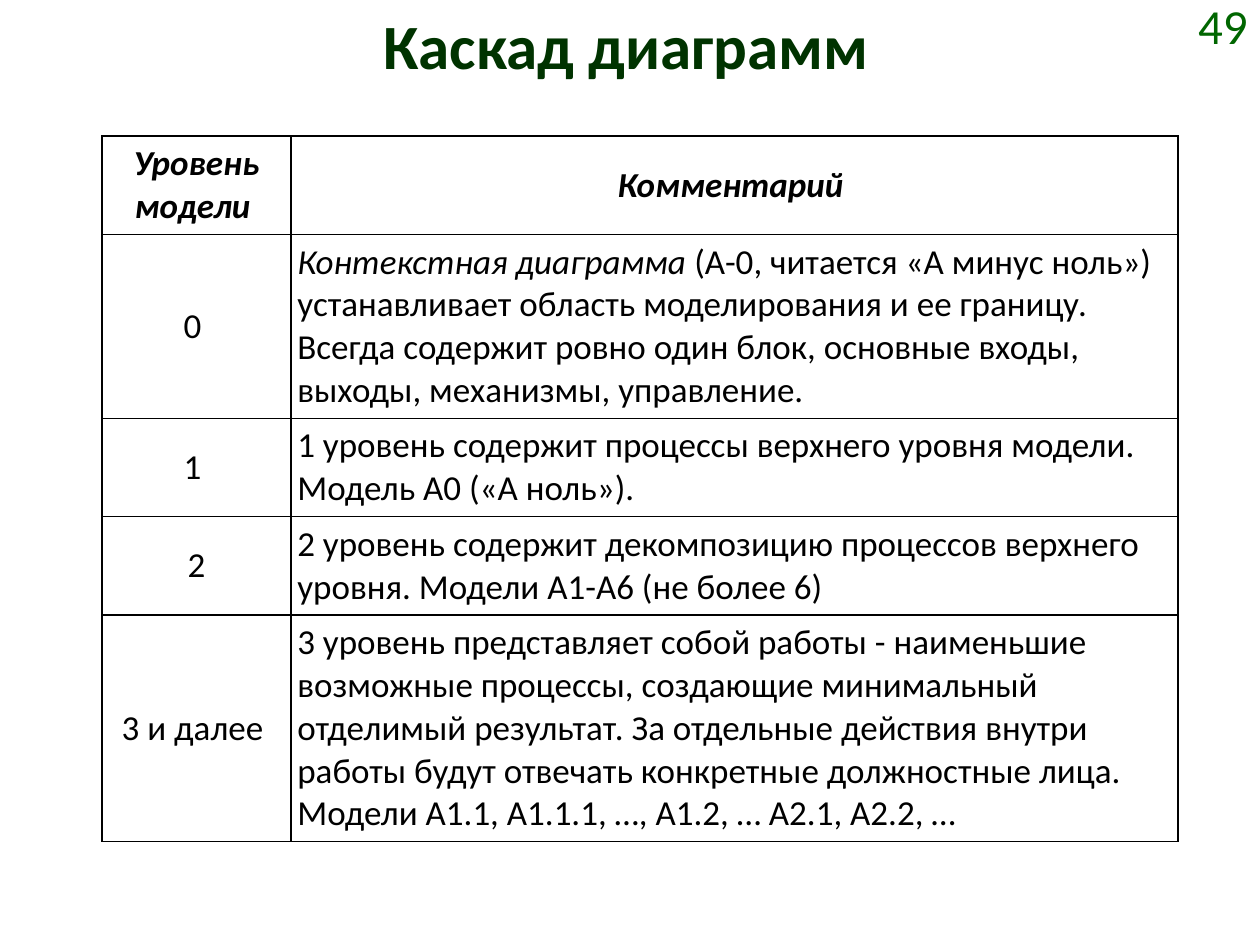
from lxml import etree
from pptx import Presentation
from pptx.dml.color import RGBColor
from pptx.enum.text import MSO_ANCHOR, PP_ALIGN
from pptx.oxml.ns import qn
from pptx.util import Inches, Pt

LEFT, CENTER, RIGHT = PP_ALIGN.LEFT, PP_ALIGN.CENTER, PP_ALIGN.RIGHT
TOP, MIDDLE = MSO_ANCHOR.TOP, MSO_ANCHOR.MIDDLE
COLUMNS = [1.5, 7.04]
ROWS = [0.78, 1.46, 0.78, 0.78, 1.8]
CELL_MARGIN = Inches(0.05)
LEVELS = [
    ("Уровень модели ", "", "Комментарий "),
    ("0 ", "Контекстная диаграмма ",
     "(A-0, читается «А минус ноль») устанавливает область моделирования и ее границу. "
     "Всегда содержит ровно один блок, основные входы, выходы, механизмы, управление."),
    ("1 ", "", "1 уровень содержит процессы верхнего уровня модели. Модель A0 («А ноль»)."),
    ("2", "", "2 уровень содержит декомпозицию процессов верхнего уровня. "
     "Модели A1-A6 (не более 6)"),
    ("3 и далее ", "",
     "3 уровень представляет собой работы - наименьшие возможные процессы, создающие "
     "минимальный отделимый результат. За отдельные действия внутри работы будут отвечать "
     "конкретные должностные лица. Модели А1.1, А1.1.1, …, А1.2, … А2.1, А2.2, …"),
]


def write(frame, text, size=20, color="000000", bold=False, italic=False, align=LEFT):
    paragraph = frame.paragraphs[0]
    paragraph.alignment = align
    run = paragraph.add_run()
    run.text = text
    font = run.font
    font.name, font.size, font.bold, font.italic = "Calibri", Pt(size), bold, italic
    font.color.rgb = RGBColor.from_string(color)


def add_borders(cell, color="000000", width=1):
    properties = cell._tc.get_or_add_tcPr()
    for position, side in enumerate(("a:lnL", "a:lnR", "a:lnT", "a:lnB")):
        line = etree.Element(qn(side), w=str(Pt(width)))
        fill = etree.SubElement(line, qn("a:solidFill"))
        etree.SubElement(fill, qn("a:srgbClr"), val=color)
        properties.insert(position, line)


presentation = Presentation()
presentation.slide_width, presentation.slide_height = Inches(10), Inches(7.5)
slide = presentation.slides.add_slide(presentation.slide_layouts[5])

title = slide.shapes.title
title.left, title.top, title.width, title.height = Inches(0.47), 0, Inches(9), Inches(0.94)
title.text_frame.vertical_anchor = TOP
write(title.text_frame, "Каскад диаграмм", size=36, color="003300", bold=True, align=CENTER)

page_number = slide.shapes.add_textbox(Inches(8.98), 0, Inches(1.02), Inches(0.39))
page_number.text_frame.word_wrap = True
page_number.text_frame.vertical_anchor = MIDDLE
write(page_number.text_frame, "49", size=28, color="006600", align=RIGHT)

table = slide.shapes.add_table(
    len(ROWS), len(COLUMNS), Inches(0.81), Inches(1.08),
    Inches(sum(COLUMNS)), Inches(sum(ROWS))).table
table.first_row = table.horz_banding = False
for column, width in zip(table.columns, COLUMNS):
    column.width = Inches(width)
for row, height in zip(table.rows, ROWS):
    row.height = Inches(height)

for index, (level, term, comment) in enumerate(LEVELS):
    header = index == 0
    level_cell, comment_cell = table.cell(index, 0), table.cell(index, 1)
    for cell in (level_cell, comment_cell):
        cell.fill.background()
        cell.vertical_anchor = MIDDLE
        cell.margin_left = cell.margin_right = CELL_MARGIN
        cell.margin_top = cell.margin_bottom = CELL_MARGIN
        add_borders(cell)
    write(level_cell.text_frame, level, bold=header, italic=header, align=CENTER)
    if term:
        write(comment_cell.text_frame, term, italic=True)
    write(comment_cell.text_frame, comment, bold=header, italic=header,
          align=CENTER if header else LEFT)

presentation.save("out.pptx")
